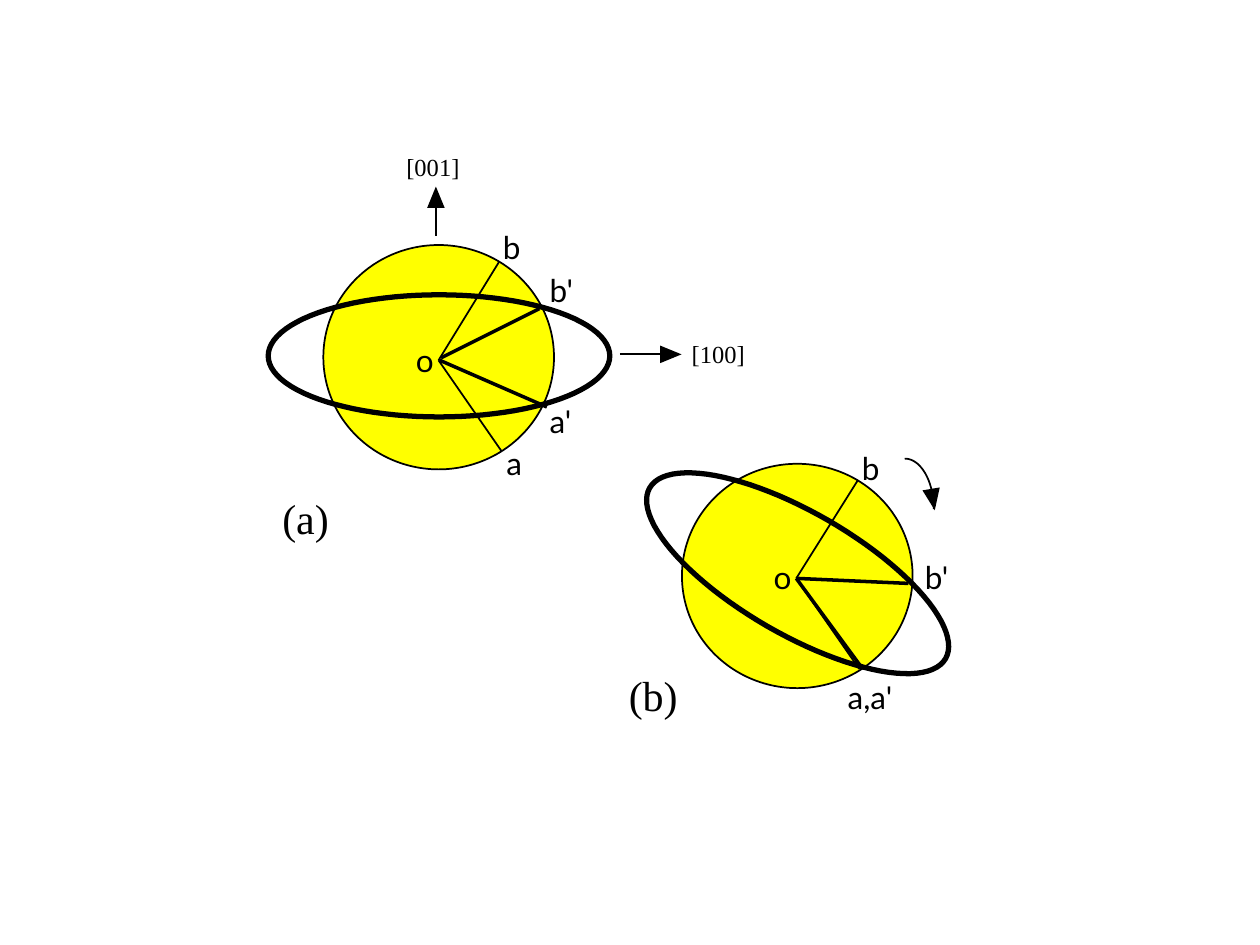
from dataclasses import dataclass
from math import atan2, cos, hypot, radians, sin

from pptx import Presentation
from pptx.dml.color import RGBColor
from pptx.enum.shapes import MSO_CONNECTOR, MSO_SHAPE
from pptx.enum.text import MSO_ANCHOR, MSO_AUTO_SIZE, PP_ALIGN
from pptx.oxml.ns import qn
from pptx.util import Pt


@dataclass(frozen=True)
class Theme:
    ink: RGBColor = RGBColor(0x00, 0x00, 0x00)
    disc: RGBColor = RGBColor(0xFF, 0xFF, 0x00)
    sans: str = "Lato"
    serif: str = "Times New Roman"
    axis_size: int = 14
    point_size: int = 18
    caption_size: int = 24
    thin: int = 1
    medium: int = 2
    heavy: int = 3


def ellipse_points(center, radii, start=0, sweep=360, tilt=0, steps=96):
    """Points along an ellipse, with angles in degrees, clockwise."""
    turn = radians(tilt)
    points = []
    for step in range(steps + 1):
        angle = radians(start + sweep * step / steps)
        x, y = radii[0] * cos(angle), radii[1] * sin(angle)
        points.append((center[0] + x * cos(turn) - y * sin(turn),
                       center[1] + x * sin(turn) + y * cos(turn)))
    return points


class Sketch:
    def __init__(self, slide, theme):
        self.slide = slide
        self.theme = theme

    def stroke(self, shape, width):
        shape.line.color.rgb = self.theme.ink
        shape.line.width = Pt(width)

    def disc(self, left, top, width, height):
        shape = self.slide.shapes.add_shape(
            MSO_SHAPE.OVAL, Pt(left), Pt(top), Pt(width), Pt(height))
        shape.shadow.inherit = False
        shape.fill.solid()
        shape.fill.fore_color.rgb = self.theme.disc
        self.stroke(shape, self.theme.thin)

    def outline(self, points, width=None, closed=True):
        """Stroke the path, or fill it when no line width is given."""
        corners = [(Pt(x), Pt(y)) for x, y in points]
        builder = self.slide.shapes.build_freeform(*corners[0])
        builder.add_line_segments(corners[1:], close=closed)
        shape = builder.convert_to_shape()
        shape.shadow.inherit = False
        if width:
            shape.fill.background()
            self.stroke(shape, width)
        else:
            shape.fill.solid()
            shape.fill.fore_color.rgb = self.theme.ink
            shape.line.fill.background()

    def line(self, start, end, width):
        connector = self.slide.shapes.add_connector(
            MSO_CONNECTOR.STRAIGHT, *(Pt(value) for value in start + end))
        properties = connector._element.spPr
        self.stroke(connector, width)
        properties.append(properties.makeelement(qn("a:effectLst"), {}))

    def arrowhead(self, base, tip, half_width=5):
        dx, dy = tip[0] - base[0], tip[1] - base[1]
        length = hypot(dx, dy)
        side_x, side_y = -dy / length * half_width, dx / length * half_width
        self.outline([(base[0] + side_x, base[1] + side_y), tip,
                      (base[0] - side_x, base[1] - side_y)])

    def arrow(self, start, tip, head=12.2):
        angle = atan2(tip[1] - start[1], tip[0] - start[0])
        base = (tip[0] - head * cos(angle), tip[1] - head * sin(angle))
        self.line(start, base, self.theme.thin)
        self.arrowhead(base, tip)

    def label(self, text, left, top, width, size, font):
        box = self.slide.shapes.add_textbox(
            Pt(left), Pt(top), Pt(width), Pt(size * 1.2))
        frame = box.text_frame
        frame.margin_left = frame.margin_right = 0
        frame.margin_top = frame.margin_bottom = 0
        frame.word_wrap = False
        frame.auto_size = MSO_AUTO_SIZE.SHAPE_TO_FIT_TEXT
        frame.vertical_anchor = MSO_ANCHOR.TOP
        para = frame.paragraphs[0]
        para.alignment = PP_ALIGN.LEFT
        span = para.add_run()
        span.text = text
        span.font.name = font
        span.font.size = Pt(size)
        span.font.color.rgb = self.theme.ink


def main():
    deck = Presentation()
    deck.slide_width, deck.slide_height = Pt(720), Pt(540)
    page = deck.slides.add_slide(deck.slide_layouts[6])
    theme = Theme()
    sketch = Sketch(page, theme)

    # Two panels: disc corner, orbit centre, orbit tilt and radial lines
    panels = [
        ((184.8, 140), (250.9, 203.4), 0, [
            ((252, 204.5), (308.2, 176.4), theme.medium),
            ((251.3, 205.9), (312.5, 232.6), theme.medium),
            ((250.6, 205.9), (285.1, 149.8), theme.thin),
            ((250.6, 205.9), (286.6, 257.8), theme.thin)]),
        ((389.7, 265), (455.8, 327.6), 30, [
            ((455, 330.5), (519.1, 333.4), theme.medium),
            ((455, 330.5), (492.5, 381.6), theme.medium),
            ((455, 330.5), (490.3, 274.3), theme.thin),
            ((455, 330.5), (491, 382.3), theme.thin)]),
    ]
    for corner, center, tilt, radial_lines in panels:
        sketch.disc(*corner, 131.8, 128.2)
        orbit = ellipse_points(center, (97.6, 34.9), tilt=tilt)
        sketch.outline(orbit[:-1], theme.heavy)
        for start, end, width in radial_lines:
            sketch.line(start, end, width)

    # Crystal axes
    sketch.arrow((354.2, 202.5), (389.5, 202.5))
    sketch.arrow((249.1, 134.6), (249.1, 106.6))
    for text, left, top in [("[100]", 395.3, 193.7), ("[001]", 232.2, 86.8)]:
        sketch.label(text, left, top, 31, theme.axis_size, theme.serif)

    # Rotation arrow
    bend = ellipse_points((517, 290.9), (16.6, 28.8), -90, 90, steps=24)
    sketch.outline(bend, theme.thin, closed=False)
    sketch.line((533.5, 285.8), (532.1, 279.4), theme.thin)
    sketch.arrowhead((532.1, 279.4), (534.2, 291.6))

    # Point names
    for text, left, top, width in [
            ("o", 237.6, 194.8, 10.8), ("a", 289.4, 253.7, 10.1),
            ("a'", 314.1, 229.7, 15.1), ("b", 492.5, 256.6, 10.8),
            ("b'", 314.1, 154.8, 16.6), ("o", 442.1, 319, 10.8),
            ("b'", 528.5, 319, 16.6), ("b", 287.3, 130.6, 10.8),
            ("a,a'", 484.4, 387.4, 31)]:
        sketch.label(text, left, top, width, theme.point_size, theme.sans)

    # Panel captions
    for text, left, top, width in [("(a)", 161.3, 281.5, 28.1),
                                   ("(b)", 359.3, 382.3, 29.5)]:
        sketch.label(text, left, top, width, theme.caption_size, theme.serif)

    deck.save("out.pptx")


if __name__ == "__main__":
    main()
